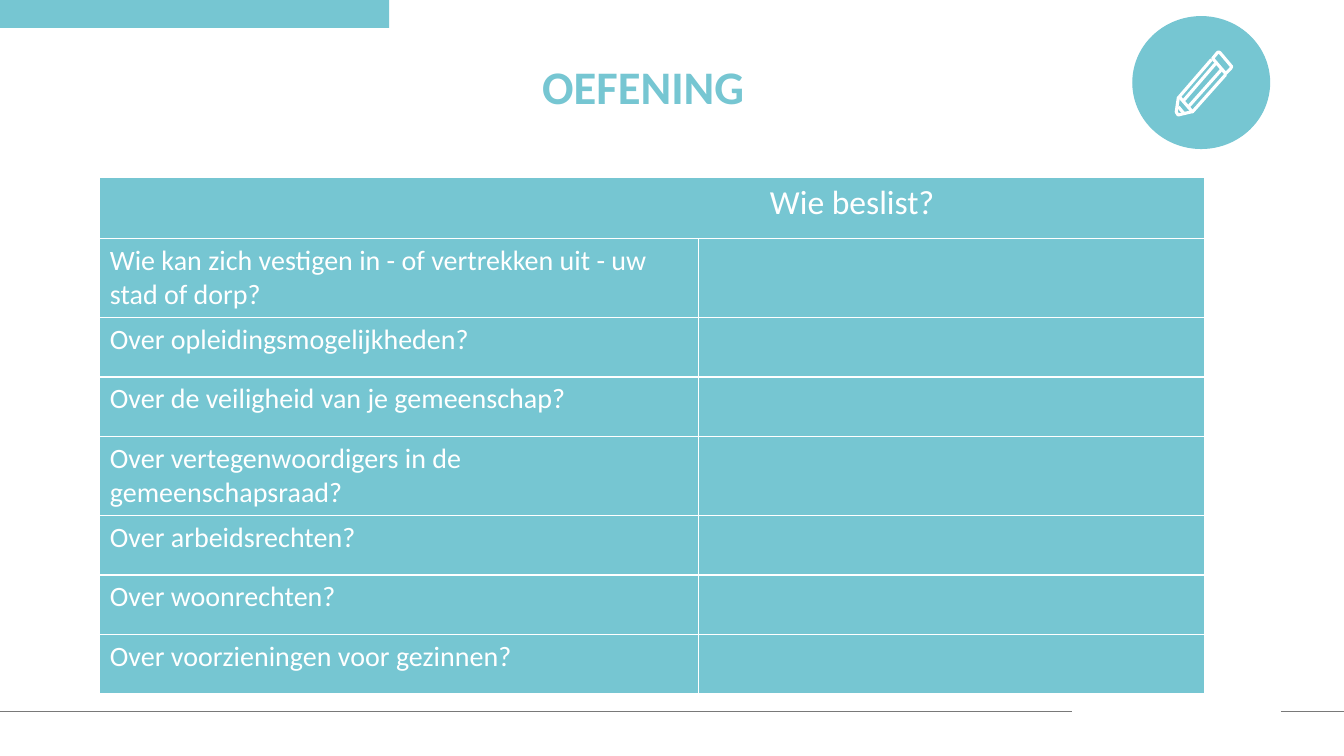
from dataclasses import dataclass

from lxml.etree import SubElement
from pptx import Presentation
from pptx.dml.color import RGBColor
from pptx.enum.shapes import MSO_CONNECTOR, MSO_SHAPE
from pptx.enum.text import MSO_ANCHOR, MSO_AUTO_SIZE, PP_ALIGN
from pptx.oxml import parse_xml
from pptx.oxml.ns import nsdecls, qn
from pptx.util import Pt


@dataclass(frozen=True)
class Theme:
    font: str = "Calibri"
    teal: RGBColor = RGBColor(0x76, 0xC6, 0xD2)
    white: RGBColor = RGBColor(0xFF, 0xFF, 0xFF)
    gray: RGBColor = RGBColor(0x79, 0x79, 0x79)
    title: float = 33.3
    head: float = 24
    body: float = 20


theme = Theme()


def style(para, size, color, bold=False):
    font = para.font
    font.name, font.size, font.bold = theme.font, Pt(size), bold
    font.color.rgb = color


def paint(cell):
    """Give a table cell its white borders and teal fill."""
    props = cell._tc.get_or_add_tcPr()
    for side in "LRTB":
        props.append(parse_xml(
            f'<a:ln{side} {nsdecls("a")} w="{Pt(1)}"><a:solidFill>'
            f'<a:srgbClr val="{theme.white}"/></a:solidFill></a:ln{side}>'))
    cell.fill.solid()
    cell.fill.fore_color.rgb = theme.teal


deck = Presentation()
deck.slide_width, deck.slide_height = Pt(960), Pt(540)
slide = deck.slides.add_slide(deck.slide_layouts[5])
shapes = slide.shapes

# Top bar and footer rule
bar = shapes.add_shape(MSO_SHAPE.RECTANGLE, Pt(0), Pt(0), Pt(278), Pt(20))
bar.shadow.inherit = False
bar.fill.solid()
bar.fill.fore_color.rgb = theme.teal
bar.line.fill.background()

for left, right in ((0, 765.5), (915, 960)):
    rule = shapes.add_connector(
        MSO_CONNECTOR.STRAIGHT, Pt(left), Pt(508.3), Pt(right), Pt(508.3))
    rule.line.color.rgb = theme.gray
    rule.line.width = Pt(0.5)
    SubElement(rule._element.spPr, qn("a:effectLst"))

# Title
title = shapes.title
title.left, title.top, title.width, title.height = Pt(380), Pt(42.5), Pt(168), Pt(50)
frame = title.text_frame
frame.text = "OEFENING"
frame.auto_size = MSO_AUTO_SIZE.NONE
frame.vertical_anchor = MSO_ANCHOR.TOP
para = frame.paragraphs[0]
para.alignment = PP_ALIGN.LEFT
para.line_spacing = 0.9
style(para, theme.title, theme.teal, True)

# Pencil badge
badge = shapes.add_group_shape().shapes
disc = badge.add_shape(
    MSO_SHAPE.FLOWCHART_CONNECTOR, Pt(809.3), Pt(12), Pt(97.5), Pt(94))
disc.shadow.inherit = False
disc.fill.solid()
disc.fill.fore_color.rgb = theme.teal
disc.line.color.rgb = theme.teal
disc.line.width = Pt(1)

eraser = [(879.1, 46.8), (871.2, 37.4), (869.8, 37.4), (866.2, 41.8),
          (875.5, 52.6), (879.1, 49), (879.8, 47.5)]
barrel = [(865.4, 42.5), (842.4, 69.1), (841.7, 69.8), (840.2, 79.9), (841, 81.4),
          (841.7, 82.1), (851, 79.9), (851.8, 79.9), (875.5, 53.3)]
ridges = [[(872.6, 49.7), (848.9, 76.3)], [(845.3, 72), (868.3, 45.4)]]
lead = [(845.3, 80.6), (841.7, 76.3)]
collar = [(842.4, 69.1), (851.8, 79.9)]
for points in (eraser, barrel, *ridges, lead, collar):
    grid = [(x * 100, y * 100) for x, y in points]
    pen = badge.build_freeform(*grid[0], scale=Pt(0.01))
    pen.add_line_segments(grid[1:], close=points is eraser)
    stroke = pen.convert_to_shape()
    stroke.shadow.inherit = False
    stroke.fill.background()
    stroke.line.color.rgb = theme.white
    stroke.line.width = Pt(2.25)

# Question table: row text and row height
rows = [
    ("Wie beslist?", 43.5),
    ("Wie kan zich vestigen in - of vertrekken uit - uw stad of dorp?", 56.4),
    ("Over opleidingsmogelijkheden?", 42.5),
    ("Over de veiligheid van je gemeenschap?", 42.5),
    ("Over vertegenwoordigers in de gemeenschapsraad?", 56.4),
    ("Over arbeidsrechten?", 42.5),
    ("Over woonrechten?", 42.5),
    ("Over voorzieningen voor gezinnen?", 42.5),
]
total = sum(height for _, height in rows)
table = shapes.add_table(
    len(rows), 2, Pt(71.3), Pt(127), Pt(789), Pt(total)).table
table.first_row = table.horz_banding = False
table.columns[0].width, table.columns[1].width = Pt(427.5), Pt(361.5)

for index, (text, height) in enumerate(rows):
    table.rows[index].height = Pt(height)
    for cell in table.rows[index].cells:
        paint(cell)
    cell = table.cell(index, 0)
    cell.text = text
    style(cell.text_frame.paragraphs[0], theme.body if index else theme.head, theme.white)

head = table.cell(0, 0)
head.merge(table.cell(0, 1))
head.margin_left = Pt(293)
head.text_frame.paragraphs[0].alignment = PP_ALIGN.CENTER

deck.save("out.pptx")
